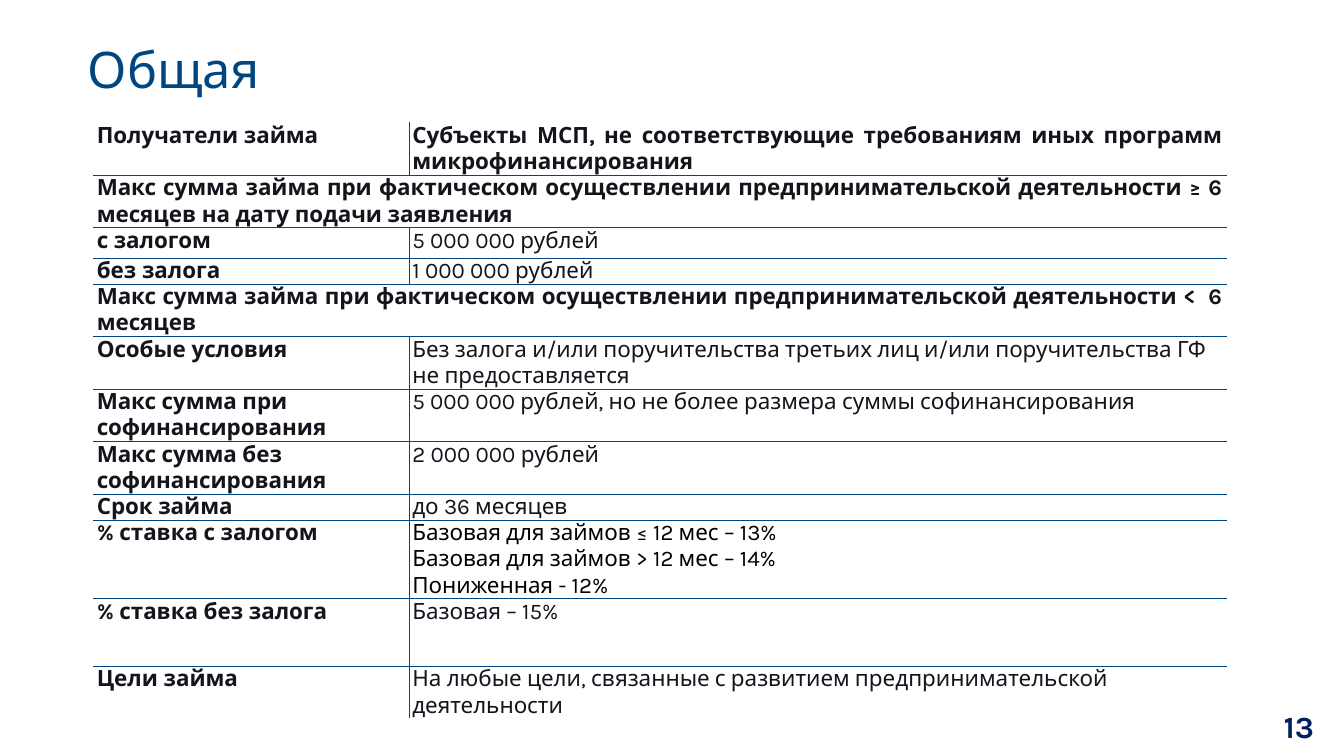
"""Build the slide with the general loan programme terms."""
from dataclasses import dataclass

from lxml.etree import SubElement
from pptx import Presentation
from pptx.dml.color import RGBColor
from pptx.enum.text import MSO_ANCHOR, MSO_AUTO_SIZE, PP_ALIGN
from pptx.oxml.ns import qn
from pptx.util import Inches, Pt

TITLE = "Общая"
PAGE = "13"
TERMS = [
    (0.5, "Получатели займа",
     ["Субъекты МСП, не соответствующие требованиям иных программ микрофинансирования "]),
    (0.5, "Макс сумма займа при фактическом осуществлении предпринимательской "
          "деятельности ≥ 6 месяцев на дату подачи заявления", None),
    (0.3, "с залогом", ["5 000 000 рублей"]),
    (0.25, "без залога", ["1 000 000 рублей"]),
    (0.5, "Макс сумма займа при фактическом осуществлении предпринимательской "
          "деятельности <  6 месяцев", None),
    (0.5, "Особые условия",
     ["Без залога и/или поручительства третьих лиц и/или поручительства ГФ не предоставляется"]),
    (0.5, "Макс сумма при софинансирования",
     ["5 000 000 рублей, но не более размера суммы софинансирования"]),
    (0.5, "Макс сумма без софинансирования", ["2 000 000 рублей"]),
    (0.25, "Срок займа", ["до 36 месяцев"]),
    (0.75, "% ставка с залогом",
     ["Базовая для займов ≤ 12 мес – 13%",
      "Базовая для займов > 12 мес – 14%",
      "Пониженная - 12%"]),
    (0.67, "% ставка без залога", ["Базовая – 15%"]),
    (0.25, "Цели займа",
     ["На любые цели, связанные с развитием предпринимательской деятельности"]),
]
COL_WIDTHS = (3.13, 8.1)


@dataclass(frozen=True)
class Theme:
    font: str = "Karla"
    accent: str = "004680"
    page: str = "002060"
    ink: str = "13151C"
    black: str = "000000"
    paper: str = "FFFFFF"
    title_size: int = 36
    page_size: int = 22
    cell_size: int = 16


T = Theme()


def style(p, size, color, bold=False, align=PP_ALIGN.LEFT):
    p.alignment = align
    f = p.font
    f.name, f.size, f.bold = T.font, Pt(size), bold
    f.color.rgb = RGBColor.from_string(color)


def set_borders(cell, colors):
    tc_pr = cell._tc.get_or_add_tcPr()
    for i, (side, color) in enumerate(zip("LRTB", colors)):
        width = Pt(1 if color == T.paper else 0.75)
        ln = SubElement(tc_pr, qn(f"a:ln{side}"), w=str(width))
        fill = SubElement(ln, qn("a:solidFill"))
        SubElement(fill, qn("a:srgbClr"), val=color)
        tc_pr.insert(i, ln)


def fill_cell(cell, lines, color, bold, align):
    tf = cell.text_frame
    tf.text = "\n".join(lines)
    for p in tf.paragraphs:
        style(p, T.cell_size, color, bold, align)


def add_terms(s):
    heights = [h for h, _, _ in TERMS]
    tbl = s.shapes.add_table(len(TERMS), 2, Inches(0.93), Inches(1.22),
                             Inches(sum(COL_WIDTHS)), Inches(sum(heights))).table
    tbl.first_row = tbl.horz_banding = False
    for col, width in zip(tbl.columns, COL_WIDTHS):
        col.width = Inches(width)

    last = len(TERMS) - 1
    for r, (height, label, values) in enumerate(TERMS):
        tbl.rows[r].height = Inches(height)
        wide = values is None
        left, right = tbl.cell(r, 0), tbl.cell(r, 1)
        inner = T.paper if wide else T.accent
        top = T.paper if r == 0 else T.accent
        bottom = T.paper if r == last else T.accent
        for cell, sides in ((left, (T.paper, inner)), (right, (inner, T.paper))):
            cell.margin_left = cell.margin_right = Inches(0.03)
            cell.margin_top = cell.margin_bottom = 0
            cell.fill.solid()
            cell.fill.fore_color.rgb = RGBColor.from_string(T.paper)
            set_borders(cell, (*sides, top, bottom))
        fill_cell(left, [label], T.ink, True,
                  PP_ALIGN.JUSTIFY if wide else PP_ALIGN.LEFT)
        if wide:
            left.merge(right)
        else:
            fill_cell(right, values, T.black if len(values) > 1 else T.ink, r == 0,
                      PP_ALIGN.JUSTIFY if r == 0 else PP_ALIGN.LEFT)


def add_title(s):
    sp = s.shapes.title
    sp.left, sp.top = Inches(0.77), Inches(0.27)
    sp.width, sp.height = Inches(11.94), Inches(0.9)
    tf = sp.text_frame
    tf.text = TITLE
    tf.auto_size = MSO_AUTO_SIZE.NONE
    tf.vertical_anchor = MSO_ANCHOR.MIDDLE
    p = tf.paragraphs[0]
    p.line_spacing = 0.9
    style(p, T.title_size, T.accent)


def add_page_number(s):
    sp = s.shapes.add_textbox(Inches(10.07), Inches(7.05), Inches(3.06), Inches(0.31))
    tf = sp.text_frame
    tf.word_wrap = True
    tf.vertical_anchor = MSO_ANCHOR.MIDDLE
    tf.text = PAGE
    style(tf.paragraphs[0], T.page_size, T.page, True, PP_ALIGN.RIGHT)


def main():
    prs = Presentation()
    prs.slide_width, prs.slide_height = Inches(13.33), Inches(7.5)
    s = prs.slides.add_slide(prs.slide_layouts[5])
    add_title(s)
    add_terms(s)
    add_page_number(s)
    prs.save("out.pptx")


if __name__ == "__main__":
    main()
